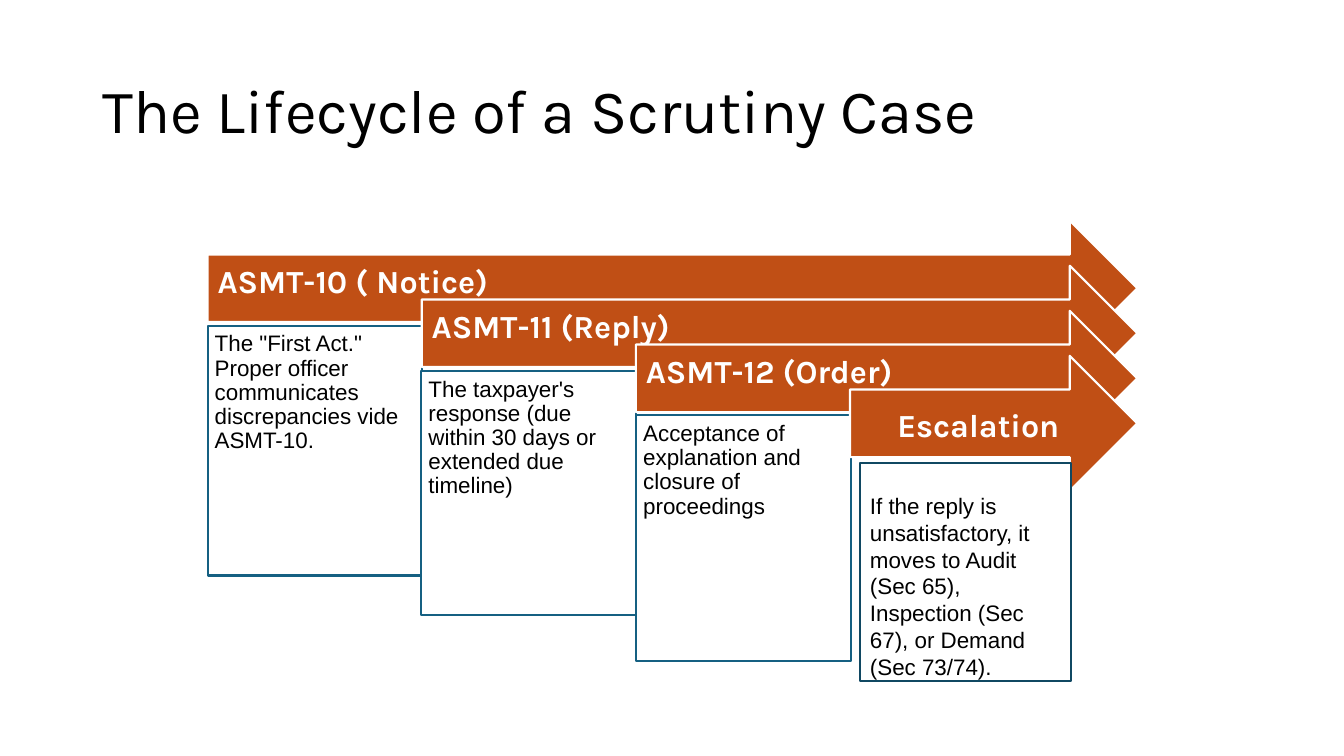
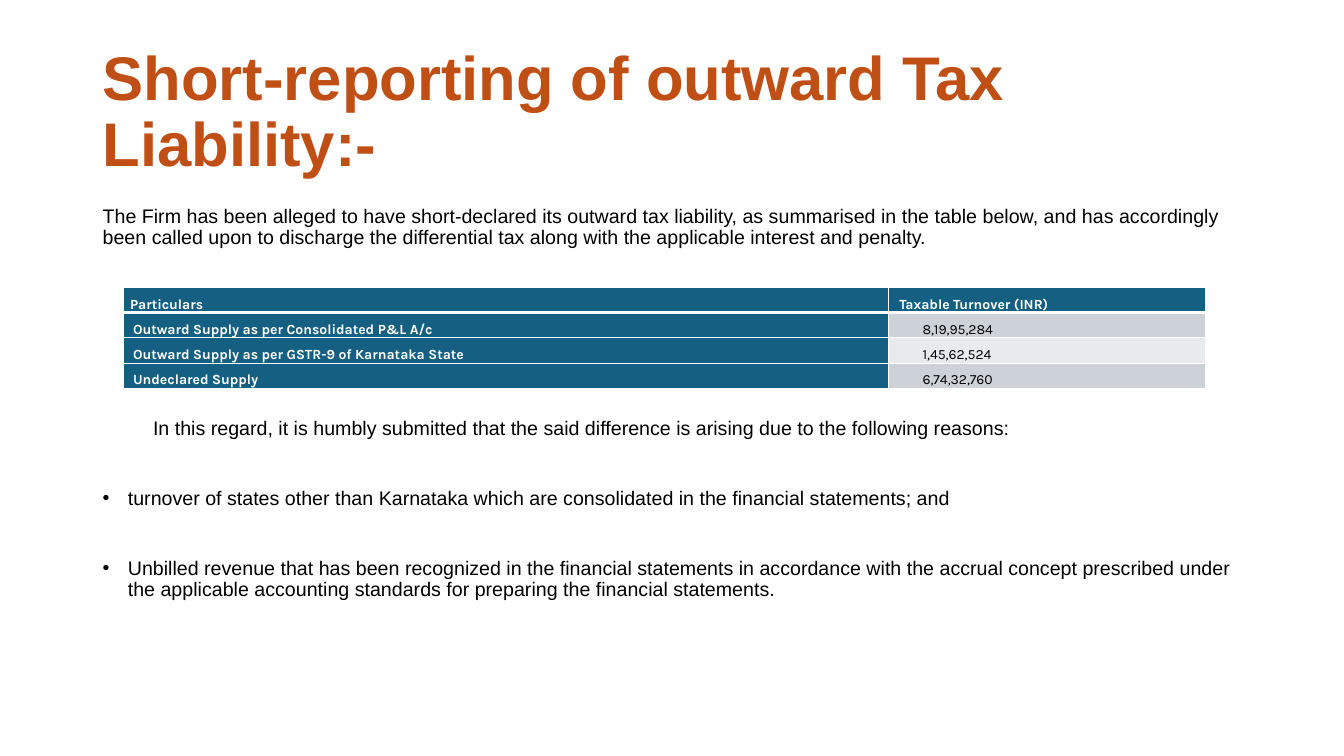
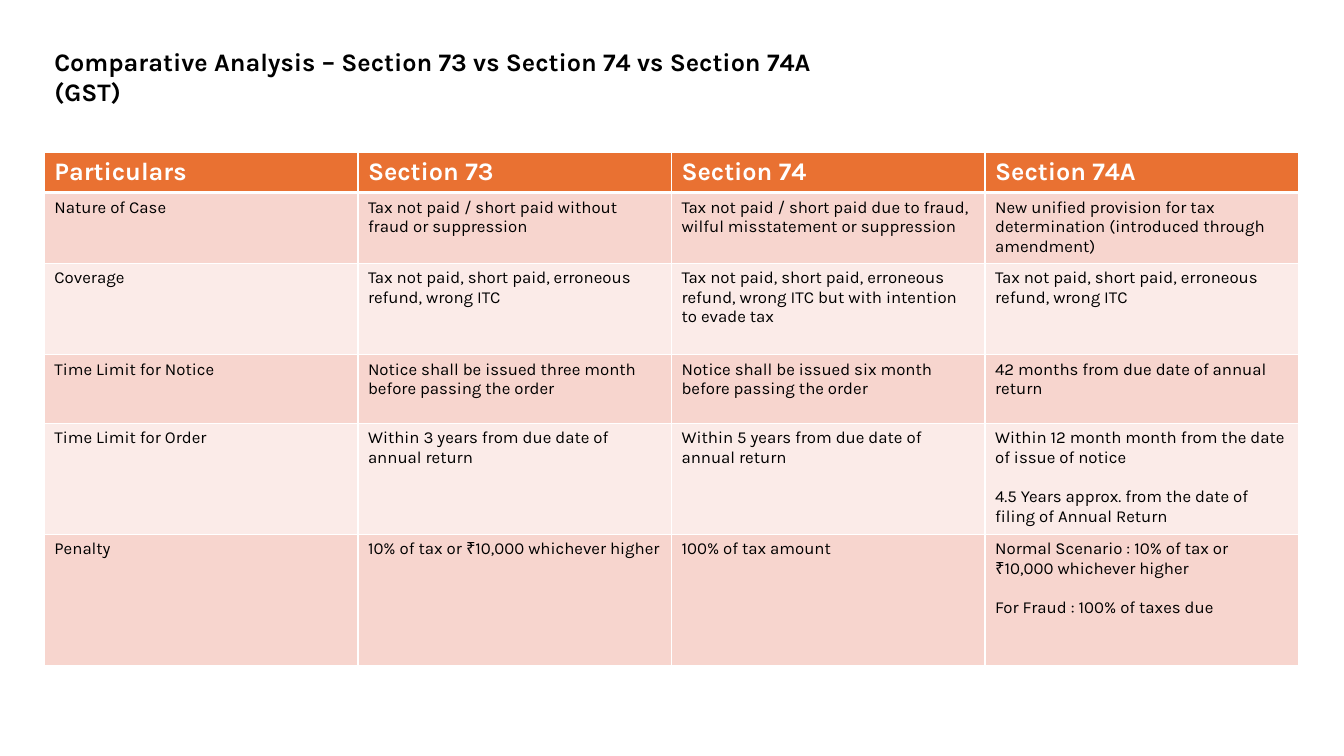
"""Build three slides on the scrutiny of tax returns."""
from dataclasses import dataclass

from lxml.etree import SubElement
from pptx import Presentation
from pptx.dml.color import RGBColor
from pptx.enum.shapes import MSO_SHAPE as Shape
from pptx.enum.text import MSO_ANCHOR as Anchor, PP_ALIGN as Align
from pptx.oxml.ns import qn
from pptx.util import Inches, Pt

KARLA, ARIAL = "Karla", "Arial"
BLACK, WHITE, RUST, ORANGE = "000000", "FFFFFF", "C04F15", "E97132"
TEAL, DARK_TEAL = "156082", "104862"
GREYS = ("CCD2D8", "E8EAED")
PINKS = ("F7D5CE", "FBEBE8")


@dataclass(frozen=True)
class Style:
    size: float
    font: str = KARLA
    color: str = BLACK
    bold: bool = False
    spacing: float = 1.0


@dataclass(frozen=True)
class Line:
    text: str
    before: float = 0
    left: float = 0
    bullet: bool = False


@dataclass(frozen=True)
class Area:
    left: float
    top: float
    width: float
    height: float


@dataclass(frozen=True)
class Insets:
    left: float = 0.1
    top: float = 0.05
    right: float = 0.1
    bottom: float = 0.05


@dataclass(frozen=True)
class Step:
    label: str
    detail: str
    detail_area: Area
    edge: str = TEAL
    label_insets: Insets = Insets(0.1, 0.1, 0.28, 0.21)
    detail_insets: Insets = Insets(0.07, 0.07, 0.07, 0.07)
    spacing: float = 0.9


@dataclass(frozen=True)
class Cell:
    lines: tuple[Line, ...]
    fill: str
    style: Style
    insets: Insets = Insets()
    anchor: Anchor = Anchor.TOP


TITLE = Style(44, spacing=0.9)
TITLE_AREA = Area(0.92, 0.4, 11.5, 1.45)
BODY = Style(14, ARIAL, spacing=0.9)

FIRST_LEFT, LAST_LEFT, ARROW_TIP = 2.06, 8.43, 11.28
FIRST_TOP, LAST_TOP, ARROW_HEIGHT = 2.19, 3.53, 1.34
STEPS = (
    Step("ASMT-10 ( Notice)",
         'The "First Act." Proper officer communicates discrepancies vide ASMT-10.',
         Area(2.06, 3.23, 2.13, 2.48)),
    Step("ASMT-11 (Reply)",
         "The taxpayer's response (due within 30 days or extended due timeline)",
         Area(4.18, 3.68, 2.13, 2.42)),
    Step("ASMT-12 (Order)",
         "Acceptance of explanation and closure of proceedings",
         Area(6.31, 4.12, 2.13, 2.44)),
    Step("Escalation",
         "If the reply is unsatisfactory, it moves to Audit (Sec 65), "
         "Inspection (Sec 67), or Demand (Sec 73/74).",
         Area(8.53, 4.59, 2.09, 2.17), DARK_TEAL,
         Insets(0.47, 0.1, 0.1, 0.08), Insets(0.1, 0.29, 0.21, 0), 1.0),
)

LIABILITY_LINES = (
    Line("The Firm has been alleged to have short‑declared its outward tax liability, "
         "as summarised in the table below, and has accordingly been called upon to "
         "discharge the differential tax along with the applicable interest and penalty."),
    Line("In this regard, it is humbly submitted that the said difference is arising "
         "due to the following reasons:", 121, 0.5),
    Line("turnover of states other than Karnataka which are consolidated in the "
         "financial statements; and", 35, 0.25, True),
    Line("Unbilled revenue that has been recognized in the financial statements in "
         "accordance with the accrual concept prescribed under the applicable "
         "accounting standards for preparing the financial statements.", 35, 0.25, True),
)
TURNOVER = (
    ("Particulars", "Taxable Turnover (INR)"),
    ("Outward Supply as per Consolidated P&L A/c", "8,19,95,284"),
    ("Outward Supply as per GSTR-9 of Karnataka State", "1,45,62,524"),
    ("Undeclared Supply", "6,74,32,760"),
)
SECTIONS = (
    ("Particulars", "Section 73", "Section 74", "Section 74A"),
    ("Nature of Case",
     "Tax not paid / short paid without fraud or suppression",
     "Tax not paid / short paid due to fraud, wilful misstatement or suppression",
     "New unified provision for tax determination (introduced through amendment)"),
    ("Coverage",
     "Tax not paid, short paid, erroneous refund, wrong ITC",
     "Tax not paid, short paid, erroneous refund, wrong ITC but with intention "
     "to evade tax",
     "Tax not paid, short paid, erroneous refund, wrong ITC"),
    ("Time Limit for Notice",
     "Notice shall be issued three month before passing the order",
     "Notice shall be issued six month before passing the order",
     "42 months from due date of annual return"),
    ("Time Limit for Order",
     "Within 3 years from due date of annual return",
     "Within 5 years from due date of annual return",
     "Within 12 month month from the date of issue of notice\n"
     "4.5 Years approx. from the date of filing of Annual Return"),
    ("Penalty",
     "10% of tax or ₹10,000 whichever higher",
     "100% of tax amount",
     "Normal Scenario : 10% of tax or ₹10,000 whichever higher\n"
     "For Fraud : 100% of taxes due"),
)
SECTION_HEIGHTS = (0.4, 0.7, 0.91, 0.68, 1.1, 1.3)


def rgb(color: str) -> RGBColor:
    return RGBColor.from_string(color)


def place(area: Area) -> tuple:
    return tuple(Inches(n) for n in (area.left, area.top, area.width, area.height))


def set_insets(target, insets: Insets) -> None:
    target.margin_left, target.margin_top = Inches(insets.left), Inches(insets.top)
    target.margin_right, target.margin_bottom = Inches(insets.right), Inches(insets.bottom)


def write(frame, lines: tuple[Line, ...], style: Style) -> None:
    for index, line in enumerate(lines):
        para = frame.add_paragraph() if index else frame.paragraphs[0]
        properties = para._p.get_or_add_pPr()
        if line.left:
            properties.set("marL", str(Inches(line.left)))
        if line.bullet:
            properties.set("indent", str(-Inches(line.left)))
            SubElement(properties, qn("a:buFont")).set("typeface", ARIAL)
            SubElement(properties, qn("a:buChar")).set("char", "•")
        para.alignment = Align.LEFT
        para.line_spacing = style.spacing
        if line.before:
            para.space_before = Pt(line.before)
        span = para.add_run()
        span.text = line.text
        span.font.name, span.font.size = style.font, Pt(style.size)
        span.font.bold = style.bold
        span.font.color.rgb = rgb(style.color)


def fill_frame(shape, lines: tuple[Line, ...], style: Style,
               insets: Insets = Insets(), anchor: Anchor = Anchor.TOP) -> None:
    frame = shape.text_frame
    frame.word_wrap = True
    frame.vertical_anchor = anchor
    set_insets(frame, insets)
    write(frame, lines, style)


def add_text(page, area: Area, lines: tuple[Line, ...], style: Style,
             anchor: Anchor = Anchor.TOP) -> None:
    fill_frame(page.shapes.add_textbox(*place(area)), lines, style, anchor=anchor)


def add_title(page, text: str, style: Style = TITLE, area: Area = TITLE_AREA,
              anchor: Anchor = Anchor.MIDDLE) -> None:
    add_text(page, area, (Line(text),), style, anchor)


def add_panel(page, kind: Shape, area: Area, fill: str, edge: str):
    panel = page.shapes.add_shape(kind, *place(area))
    panel.shadow.inherit = False
    panel.fill.solid()
    panel.fill.fore_color.rgb = rgb(fill)
    panel.line.color.rgb = rgb(edge)
    panel.line.width = Pt(1.5)
    return panel


def add_step(page, index: int, step: Step) -> None:
    share = index / (len(STEPS) - 1)
    left = FIRST_LEFT + share * (LAST_LEFT - FIRST_LEFT)
    top = FIRST_TOP + share * (LAST_TOP - FIRST_TOP)
    arrow = add_panel(page, Shape.RIGHT_ARROW,
                      Area(left, top, ARROW_TIP - left, ARROW_HEIGHT), RUST, WHITE)
    fill_frame(arrow, (Line(step.label),), Style(23, KARLA, WHITE, True, step.spacing),
               step.label_insets, Anchor.MIDDLE)
    box = add_panel(page, Shape.RECTANGLE, step.detail_area, WHITE, step.edge)
    fill_frame(box, (Line(step.detail),), Style(16, ARIAL, spacing=step.spacing),
               step.detail_insets)


def add_border(cell, side: str, width: float) -> None:
    border = SubElement(cell._tc.get_or_add_tcPr(), qn(f"a:{side}"))
    border.set("w", str(Pt(width)))
    solid = SubElement(border, qn("a:solidFill"))
    SubElement(solid, qn("a:srgbClr")).set("val", WHITE)


def add_grid(page, left: float, top: float, widths: tuple[float, ...],
             heights: tuple[float, ...], rows: list[list[Cell]]) -> None:
    area = Area(left, top, sum(widths), sum(heights))
    table = page.shapes.add_table(len(heights), len(widths), *place(area)).table
    for column, width in zip(table.columns, widths):
        column.width = Inches(width)
    for row, height in zip(table.rows, heights):
        row.height = Inches(height)
    for row_index, row in enumerate(rows):
        for column_index, content in enumerate(row):
            cell = table.cell(row_index, column_index)
            set_insets(cell, content.insets)
            cell.vertical_anchor = content.anchor
            add_border(cell, "lnL", 1)
            add_border(cell, "lnR", 1)
            add_border(cell, "lnT", 3 if row_index == 1 else 1)
            add_border(cell, "lnB", 3 if row_index == 0 else 1)
            cell.fill.solid()
            cell.fill.fore_color.rgb = rgb(content.fill)
            write(cell.text_frame, content.lines, content.style)


def turnover_cell(row: int, column: int, text: str) -> Cell:
    is_value = row > 0 and column > 0
    fill = GREYS[(row - 1) % 2] if is_value else TEAL
    style = Style(10, KARLA, BLACK if is_value else WHITE, not is_value, 1.5)
    left = ((0.07, 0.11), (0.1, 0.34))[row > 0][column]
    return Cell((Line(text),), fill, style, Insets(left, 0, 0.07, 0), Anchor.BOTTOM)


def section_cell(row: int, text: str) -> Cell:
    lines = tuple(Line(part, 14 if index else 0)
                  for index, part in enumerate(text.split("\n")))
    if row == 0:
        return Cell(lines, ORANGE, Style(18, color=WHITE, bold=True))
    return Cell(lines, PINKS[(row - 1) % 2], Style(12))


def build_lifecycle(page) -> None:
    add_title(page, "The Lifecycle of a Scrutiny Case")
    for index, step in enumerate(STEPS):
        add_step(page, index, step)


def build_liability(page) -> None:
    add_title(page, "Short-reporting of outward Tax Liability:-",
              Style(44, ARIAL, RUST, True, 0.9))
    add_text(page, Area(0.92, 2, 11.5, 4.76), LIABILITY_LINES, BODY)
    rows = [[turnover_cell(row, column, text) for column, text in enumerate(texts)]
            for row, texts in enumerate(TURNOVER)]
    add_grid(page, 1.22, 2.85, (7.59, 3.15), (0.24,) * len(rows), rows)


def build_comparison(page) -> None:
    add_title(page, "Comparative Analysis – Section 73 vs Section 74 vs Section 74A (GST)",
              Style(18, bold=True), Area(0.44, 0.41, 8.13, 0.4), Anchor.TOP)
    rows = [[section_cell(row, text) for text in texts]
            for row, texts in enumerate(SECTIONS)]
    add_grid(page, 0.44, 1.51, (3.11,) * 4, SECTION_HEIGHTS, rows)


def main() -> None:
    deck = Presentation()
    deck.slide_width, deck.slide_height = Inches(13.33), Inches(7.5)
    for build in (build_lifecycle, build_liability, build_comparison):
        build(deck.slides.add_slide(deck.slide_layouts[6]))
    deck.save("out.pptx")


if __name__ == "__main__":
    main()
